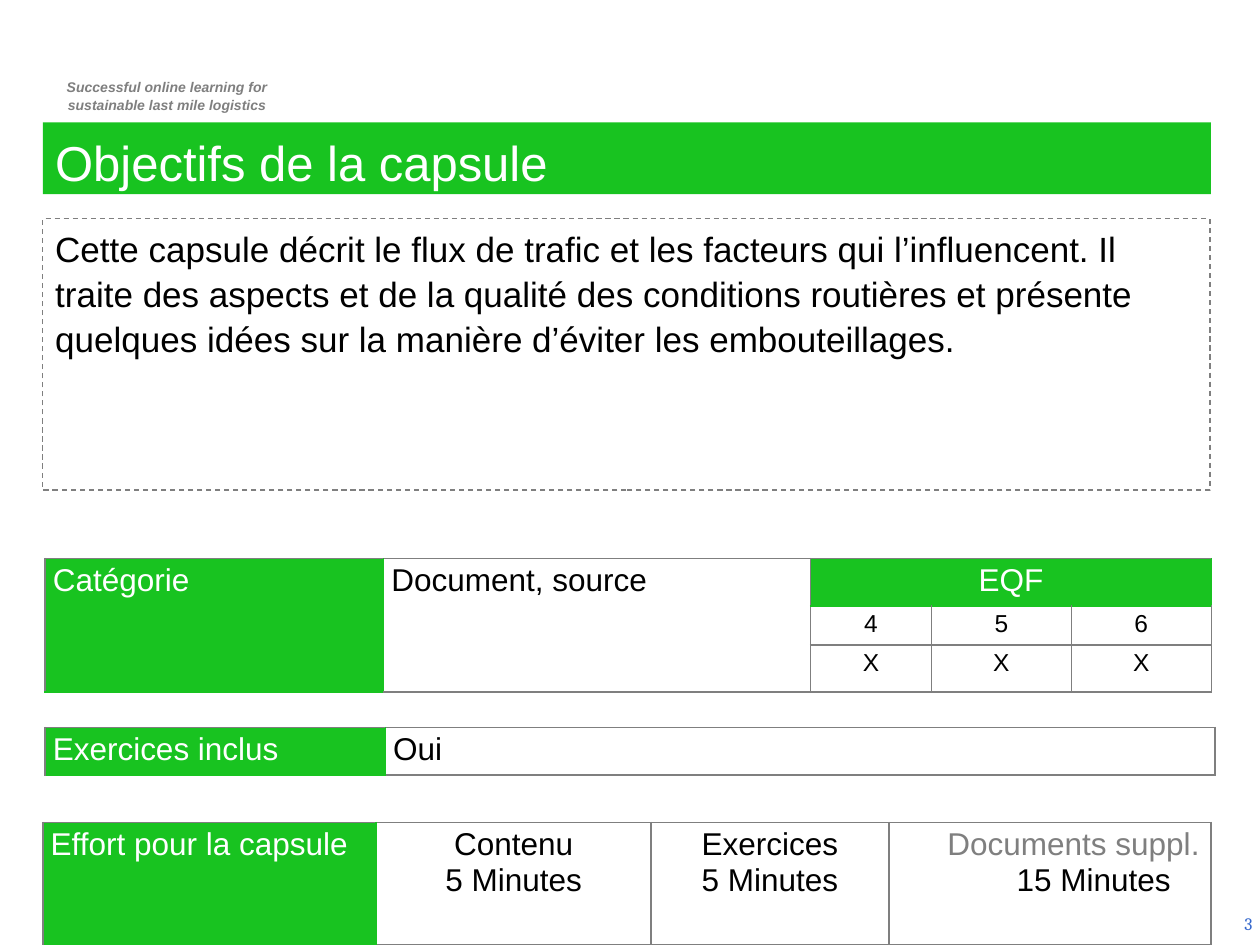
from dataclasses import dataclass
from itertools import product

from lxml.etree import SubElement as Sub
from pptx import Presentation as Deck
from pptx.dml.color import RGBColor as Rgb
from pptx.enum.dml import MSO_LINE_DASH_STYLE as Dash
from pptx.enum.shapes import MSO_SHAPE as Kind
from pptx.enum.text import MSO_ANCHOR as Anchor, PP_ALIGN as Align
from pptx.oxml.ns import qn
from pptx.util import Pt

HUES = {"green": "18C320", "gray": "7F7F7F", "white": "FFFFFF",
        "black": "000000", "blue": "3366CC"}
PLAIN = "{2D5ABB26-0587-4C30-8999-92F81FD0307C}"


@dataclass
class Line:
    text: str
    hue: str = "black"
    indent: float = 0


@dataclass
class Box:
    at: tuple[float, float, float, float]
    lines: list[Line]
    size: float
    align: Align = Align.LEFT
    font: str = "Arial"
    bold: bool = False
    fill: str = ""
    edge: str = ""
    anchor: Anchor = Anchor.TOP
    right: float = 7.2
    pitch: float = 1.07


@dataclass
class Cell:
    row: int
    col: int
    lines: list[Line]
    align: Align = Align.JUSTIFY
    size: float = 18
    green: bool = False
    rows: int = 1
    cols: int = 1


@dataclass
class Grid:
    left: float
    top: float
    cols: list[float]
    rows: list[float]
    cells: list[Cell]


def hue(name: str) -> Rgb:
    return Rgb.from_string(HUES[name])


def write(frame, lines: list[Line], align: Align, pitch: float, form: dict) -> None:
    """Fill a text frame with one paragraph for each line."""
    for i, line in enumerate(lines):
        para = frame.add_paragraph() if i else frame.paragraphs[0]
        para.alignment, para.line_spacing = align, pitch
        if line.indent:
            para._p.get_or_add_pPr().set("marL", str(Pt(line.indent)))
        run = para.add_run()
        run.text = line.text
        for key, val in form.items():
            setattr(run.font, key, val)
        run.font.color.rgb = hue(line.hue)


def draw_box(slide, box: Box) -> None:
    place = [Pt(n) for n in box.at]
    if box.fill or box.edge:
        shape = slide.shapes.add_shape(Kind.RECTANGLE, *place)
        shape.shadow.inherit = False
    else:
        shape = slide.shapes.add_textbox(*place)
    if box.fill:
        shape.fill.solid()
        shape.fill.fore_color.rgb = hue(box.fill)
    else:
        shape.fill.background()
    if box.edge:
        shape.line.color.rgb = hue(box.edge)
        shape.line.width, shape.line.dash_style = Pt(0.75), Dash.DASH
    else:
        shape.line.fill.background()
    frame = shape.text_frame
    form = {"word_wrap": True, "vertical_anchor": box.anchor,
            "margin_left": Pt(7.2), "margin_right": Pt(box.right),
            "margin_top": Pt(3.6), "margin_bottom": Pt(3.6)}
    for key, val in form.items():
        setattr(frame, key, val)
    write(frame, box.lines, box.align, box.pitch,
          {"name": box.font, "size": Pt(box.size), "bold": box.bold, "italic": box.bold})


def rule(cell, side: str, name: str) -> None:
    """Draw one border of a table cell."""
    line = Sub(cell._tc.get_or_add_tcPr(), qn(f"a:ln{side}"), w=str(Pt(1)))
    Sub(Sub(line, qn("a:solidFill")), qn("a:srgbClr"), val=HUES[name])


def draw_cell(table, item: Cell) -> None:
    """Style every grid place that the cell spans, then merge and write."""
    for r, c in product(range(item.rows), range(item.cols)):
        row, col = item.row + r, item.col + c
        part = table.cell(row, col)
        inner = "green" if item.green else "gray"
        sides = {"L": "" if col else "gray", "R": inner,
                 "T": "" if row else "gray", "B": inner}
        for side, name in sides.items():
            if name:
                rule(part, side, name)
        if item.green:
            part.fill.solid()
            part.fill.fore_color.rgb = hue("green")
        else:
            part.fill.background()
    cell = table.cell(item.row, item.col)
    if item.rows * item.cols > 1:
        cell.merge(table.cell(item.row + item.rows - 1, item.col + item.cols - 1))
    form = {"margin_left": Pt(4.5), "margin_right": Pt(4.5),
            "margin_top": Pt(2.7), "margin_bottom": Pt(2.7)}
    for key, val in form.items():
        setattr(cell, key, val)
    write(cell.text_frame, item.lines, item.align, 1,
          {"name": "Arial", "size": Pt(item.size)})


def draw_grid(slide, grid: Grid) -> None:
    frame = slide.shapes.add_table(
        len(grid.rows), len(grid.cols), Pt(grid.left), Pt(grid.top),
        Pt(sum(grid.cols)), Pt(sum(grid.rows)))
    table = frame.table
    table.first_row = table.horz_banding = False
    table._tbl.tblPr.find(qn("a:tableStyleId")).text = PLAIN
    for col, width in zip(table.columns, grid.cols):
        col.width = Pt(width)
    for row, height in zip(table.rows, grid.rows):
        row.height = Pt(height)
    for item in grid.cells:
        draw_cell(table, item)


MID = Align.CENTER
BOXES = [
    Box((21, 40.5, 146, 27), [Line("Successful online learning for", "gray", 3),
        Line("sustainable last mile logistics", "gray", 3)], 8, MID, bold=True),
    Box((555, 515, 165, 25), [Line("3", "blue")], 10, Align.RIGHT, "Cambria",
        anchor=Anchor.MIDDLE, right=4.3, pitch=1),
    Box((24.5, 70, 667.5, 41), [Line("Objectifs de la capsule", "white")], 28,
        fill="green"),
    Box((24.5, 125, 667, 155), [Line(
        "Cette capsule décrit le flux de trafic et les facteurs qui l’influencent. "
        "Il traite des aspects et de la qualité des conditions routières et présente "
        "quelques idées sur la manière d’éviter les embouteillages.")], 20, edge="gray"),
]
LEVELS = [Cell(row, col, [Line(text)], MID, 14)
          for row, texts in enumerate(("456", "XXX"), 1)
          for col, text in enumerate(texts, 2)]
GRIDS = [
    Grid(25.7, 319.2, [193.5, 244, 69, 80, 80], [26.4, 22.3, 27], [
        Cell(0, 0, [Line("Catégorie", "white")], green=True, rows=3),
        Cell(0, 1, [Line("Document, source")], rows=3),
        Cell(0, 2, [Line("EQF", "white")], MID, green=True, cols=3), *LEVELS]),
    Grid(25.7, 415.8, [194.5, 474], [27], [
        Cell(0, 0, [Line("Exercices inclus", "white")], green=True),
        Cell(0, 1, [Line("Oui")])]),
    Grid(24.5, 470, [190.5, 157, 136, 184], [69.8], [
        Cell(0, 0, [Line("Effort pour la capsule", "white")], green=True),
        Cell(0, 1, [Line("Contenu"), Line("5 Minutes")], MID),
        Cell(0, 2, [Line("Exercices"), Line("5 Minutes")], MID),
        Cell(0, 3, [Line("Documents suppl.", "gray", 27),
                    Line("15 Minutes", indent=50)], MID)]),
]


def main() -> None:
    deck = Deck()
    deck.slide_width, deck.slide_height = Pt(720), Pt(540)
    slide = deck.slides.add_slide(deck.slide_layouts[6])
    for box in BOXES:
        draw_box(slide, box)
    for grid in GRIDS:
        draw_grid(slide, grid)
    deck.save("out.pptx")


if __name__ == "__main__":
    main()
